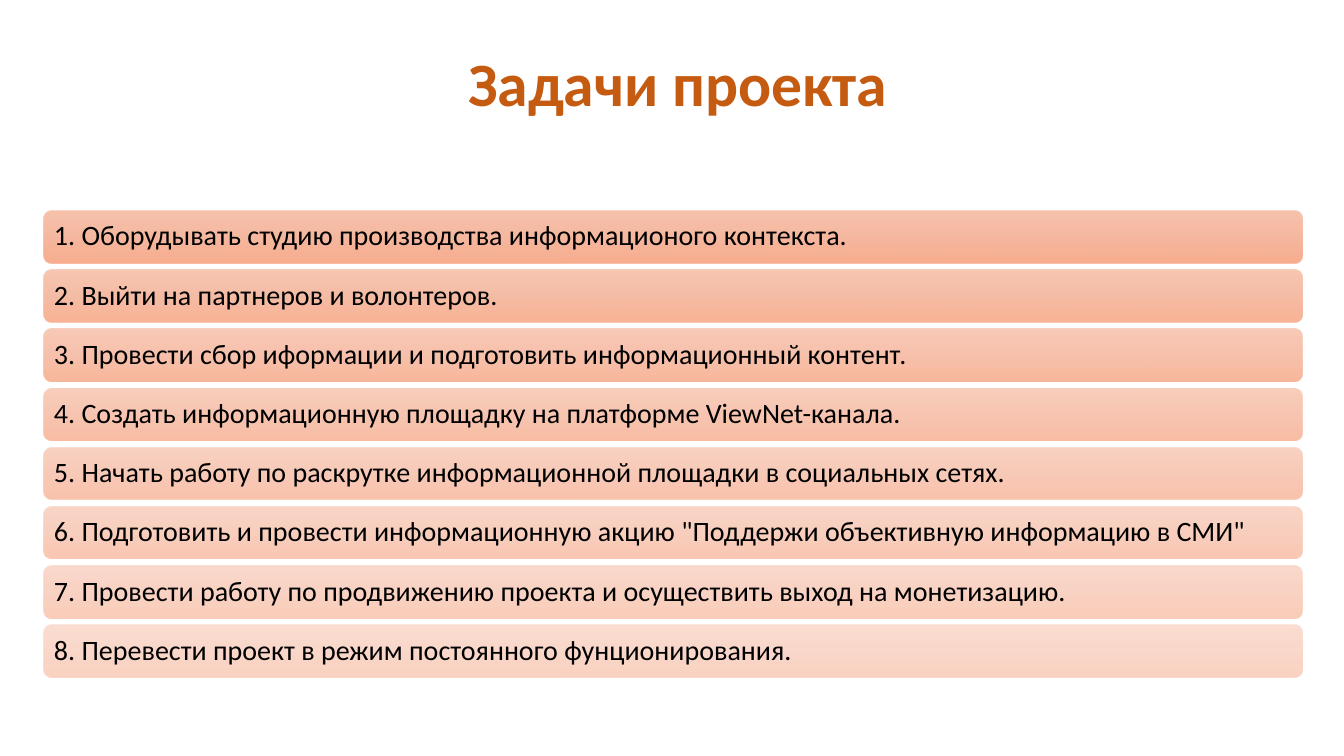
from copy import deepcopy
from lxml.etree import SubElement
from pptx import Presentation
from pptx.dml.color import RGBColor
from pptx.enum.shapes import MSO_SHAPE
from pptx.enum.text import MSO_ANCHOR, PP_ALIGN
from pptx.oxml.ns import qn
from pptx.util import Inches, Pt

# Content
TITLE = "Задачи проекта"
TASKS = [
    "Оборудывать студию производства информационого контекста.",
    "Выйти на партнеров и волонтеров.",
    "Провести сбор иформации и подготовить информационный контент.",
    "Создать информационную площадку на платформе ViewNet-канала.",
    "Начать работу по раскрутке информационной площадки в социальных сетях.",
    'Подготовить и провести информационную акцию "Поддержи объективную информацию в СМИ"',
    "Провести работу по продвижению проекта и осуществить выход на монетизацию.",
    "Перевести проект в режим постоянного фунционирования.",
]
SHADES = [(0, "F7BDA5"), (0.5, "F5B196"), (1, "F8A582")]

# Layout in inches, opacity in percent
LEFT, WIDTH, HEIGHT = 0.43, 12.49, 0.52
TOP, LAST = 2.09, 6.2
STEP = (LAST - TOP) / (len(TASKS) - 1)
DENSE, FAINT = 90, 50


def paint(color, code):
    color.rgb = RGBColor.from_string(code)


def style(para, size, code, bold=False):
    for run in para.runs:
        run.font.name = "Calibri"
        run.font.size = Pt(size)
        run.font.bold = bold
        paint(run.font.color, code)


def shade(bar, alpha):
    """Fill a bar from top to bottom with three half-clear stops."""
    bar.fill.gradient()
    bar.fill.gradient_angle = 270
    stops = bar._element.spPr.find(qn("a:gradFill")).find(qn("a:gsLst"))
    stops.append(deepcopy(stops[0]))
    for stop, node, (place, code) in zip(bar.fill.gradient_stops, stops, SHADES):
        stop.position = place
        paint(stop.color, code)
        SubElement(node[0], qn("a:alpha"), val=str(round(alpha * 1000)))


def add_bar(slide, index, task):
    top = TOP + index * STEP
    bar = slide.shapes.add_shape(
        MSO_SHAPE.ROUNDED_RECTANGLE,
        Inches(LEFT), Inches(top), Inches(WIDTH), Inches(HEIGHT))
    bar.shadow.inherit = False
    bar.line.fill.background()
    shade(bar, DENSE - (DENSE - FAINT) * index / (len(TASKS) - 1))
    frame = bar.text_frame
    frame.word_wrap = True
    frame.vertical_anchor = MSO_ANCHOR.MIDDLE
    frame.margin_left = frame.margin_right = Inches(0.08)
    frame.text = f"{index + 1}. {task}"
    para = frame.paragraphs[0]
    para.alignment = PP_ALIGN.LEFT
    para.line_spacing = 0.9
    style(para, 20, "000000")


def main():
    deck = Presentation()
    deck.slide_width, deck.slide_height = Inches(13.33), Inches(7.5)
    slide = deck.slides.add_slide(deck.slide_layouts[6])

    # Title
    head = slide.shapes.add_textbox(
        Inches(4.52), Inches(0.4), Inches(4.41), Inches(0.84))
    head.text_frame.text = TITLE
    para = head.text_frame.paragraphs[0]
    para.alignment = PP_ALIGN.CENTER
    style(para, 44, "C55A11", bold=True)

    # Task bars
    for index, task in enumerate(TASKS):
        add_bar(slide, index, task)

    deck.save("out.pptx")


if __name__ == "__main__":
    main()
